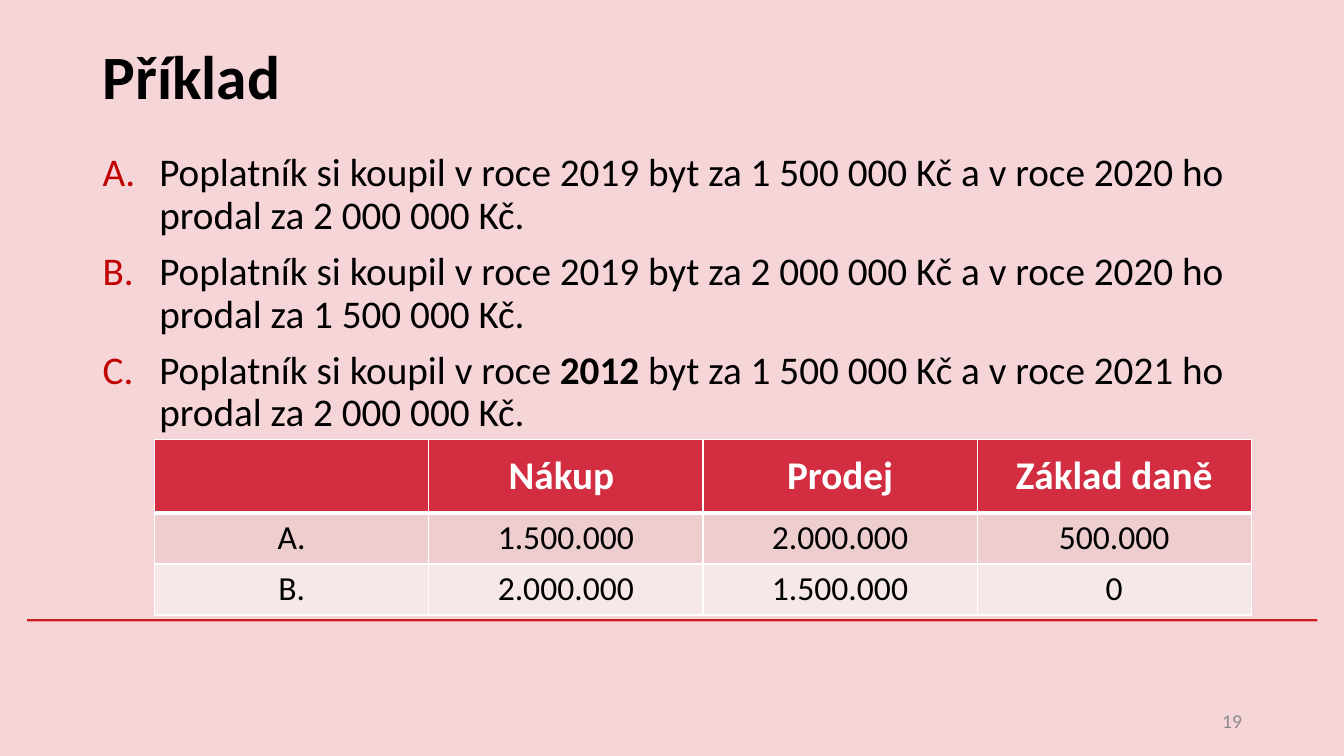
from lxml import etree
from pptx import Presentation
from pptx import util as u
from pptx.dml.color import RGBColor
from pptx.enum import shapes, text
from pptx.oxml.ns import qn


class Theme:
    font = "Calibri"
    background = "F6D5D9"
    rule = "CD1F21"
    marker = "C00000"
    ink = "000000"
    muted = "8C8C8C"
    light = "FFFFFF"
    header = "D22D40"
    bands = ("EECDCF", "F7E8E8")
    title_size, body_size, cell_size, number_size = 44, 28, 24, 14


def set_all(target, **values):
    for name, value in values.items():
        setattr(target, name, value)


def rgb(color):
    return RGBColor.from_string(color)


def paint(target, color):
    target.fill.solid()
    target.fill.fore_color.rgb = rgb(color)


class SlideBuilder:
    def __init__(self, page, theme):
        self.page, self.theme = page, theme
        paint(page.background, theme.background)

    def add_spans(self, para, pieces, size, color, bold=False):
        """Add (words, emphasised) pieces to a paragraph."""
        for words, strong in pieces:
            span = para.add_run()
            span.text = words
            set_all(span.font, name=self.theme.font, size=u.Pt(size), bold=bold or strong)
            span.font.color.rgb = rgb(color)

    def rule(self, *place):
        bar = self.page.shapes.add_shape(shapes.MSO_SHAPE.RECTANGLE, *map(u.Pt, place))
        bar.shadow.inherit = False
        bar.line.fill.background()
        paint(bar, self.theme.rule)

    def frame(self, place, anchor=text.MSO_ANCHOR.TOP):
        box = self.page.shapes.add_textbox(*map(u.Pt, place))
        set_all(box.text_frame, word_wrap=True, vertical_anchor=anchor)
        return box.text_frame

    def label(self, place, words, size, color, bold=False, align=text.PP_ALIGN.LEFT):
        para = self.frame(place, text.MSO_ANCHOR.MIDDLE).paragraphs[0]
        para.alignment = align
        self.add_spans(para, [(words, False)], size, color, bold)

    def lettered_list(self, place, items, indent):
        frame = self.frame(place)
        for index, pieces in enumerate(items):
            para = frame.add_paragraph() if index else frame.paragraphs[0]
            set_all(para, line_spacing=0.9, space_before=u.Pt(10 if index else 0))
            props = para._p.get_or_add_pPr()
            props.set("marL", str(u.Pt(indent)))
            props.set("indent", str(-u.Pt(indent)))
            tint = etree.SubElement(props, qn("a:buClr"))
            etree.SubElement(tint, qn("a:srgbClr"), val=self.theme.marker)
            etree.SubElement(props, qn("a:buFont"), typeface=self.theme.font)
            etree.SubElement(props, qn("a:buAutoNum"), type="alphaUcPeriod")
            self.add_spans(para, pieces, self.theme.body_size, self.theme.ink)

    def borders(self, cell, **widths):
        props = cell._tc.get_or_add_tcPr()
        for index, side in enumerate("LRTB"):
            line = etree.Element(qn(f"a:ln{side}"), w=str(u.Pt(widths.get(side, 1))))
            fill = etree.SubElement(line, qn("a:solidFill"))
            etree.SubElement(fill, qn("a:srgbClr"), val=self.theme.light)
            props.insert(index, line)

    def table(self, place, rows, heights):
        theme = self.theme
        grid = self.page.shapes.add_table(len(rows), len(rows[0]), *map(u.Pt, place)).table
        for row_index, (row, height) in enumerate(zip(rows, heights)):
            grid.rows[row_index].height = u.Pt(height)
            is_header = row_index == 0
            for column, words in enumerate(row):
                cell = grid.cell(row_index, column)
                set_all(cell, margin_left=u.Pt(9.36), margin_right=u.Pt(9.36),
                        margin_top=u.Pt(3.6), margin_bottom=u.Pt(3.6),
                        vertical_anchor=text.MSO_ANCHOR.MIDDLE if is_header
                        else text.MSO_ANCHOR.TOP)
                paint(cell, theme.header if is_header else theme.bands[(row_index - 1) % 2])
                self.borders(cell, B=3 if is_header else 1, T=3 if row_index == 1 else 1)
                para = cell.text_frame.paragraphs[0]
                para.alignment = text.PP_ALIGN.CENTER
                if words:
                    self.add_spans(para, [(words, False)],
                                   theme.body_size if is_header else theme.cell_size,
                                   theme.light if is_header else theme.ink, is_header)


def main():
    deck = Presentation()
    set_all(deck, slide_width=u.Pt(960), slide_height=u.Pt(540))
    theme = Theme()
    slide = SlideBuilder(deck.slides.add_slide(deck.slide_layouts[6]), theme)

    # Rule and title
    slide.rule(19.44, 442.3, 921.6, 1.5)
    slide.label((66.24, 1.44, 828, 104.4), "Příklad", theme.title_size, theme.ink, bold=True)

    # Cases: year of purchase, its emphasis, purchase price, year of sale, sale price
    cases = [
        ("2019", False, "1 500 000", "2020", "2 000 000"),
        ("2019", False, "2 000 000", "2020", "1 500 000"),
        ("2012", True, "1 500 000", "2021", "2 000 000"),
    ]
    items = [
        [("Poplatník si koupil v roce ", False), (bought, strong),
         (f" byt za {cost} Kč a v roce {sold} ho prodal za {price} Kč.", False)]
        for bought, strong, cost, sold, price in cases
    ]
    slide.lettered_list((66.24, 105.84, 828, 329), items, indent=40.5)

    # Page number
    slide.label((678.24, 500.4, 216, 28.8), "19", theme.number_size, theme.muted,
                align=text.PP_ALIGN.RIGHT)

    # Tax base table
    rows = [
        ("", "Nákup ", "Prodej", "Základ daně"),
        ("A.", "1.500.000", "2.000.000", "500.000"),
        ("B.", "2.000.000", "1.500.000", "0"),
    ]
    slide.table((110.4, 314, 783.4, 125.4), rows, heights=(52.4, 36.5, 36.5))

    deck.save("out.pptx")


if __name__ == "__main__":
    main()
